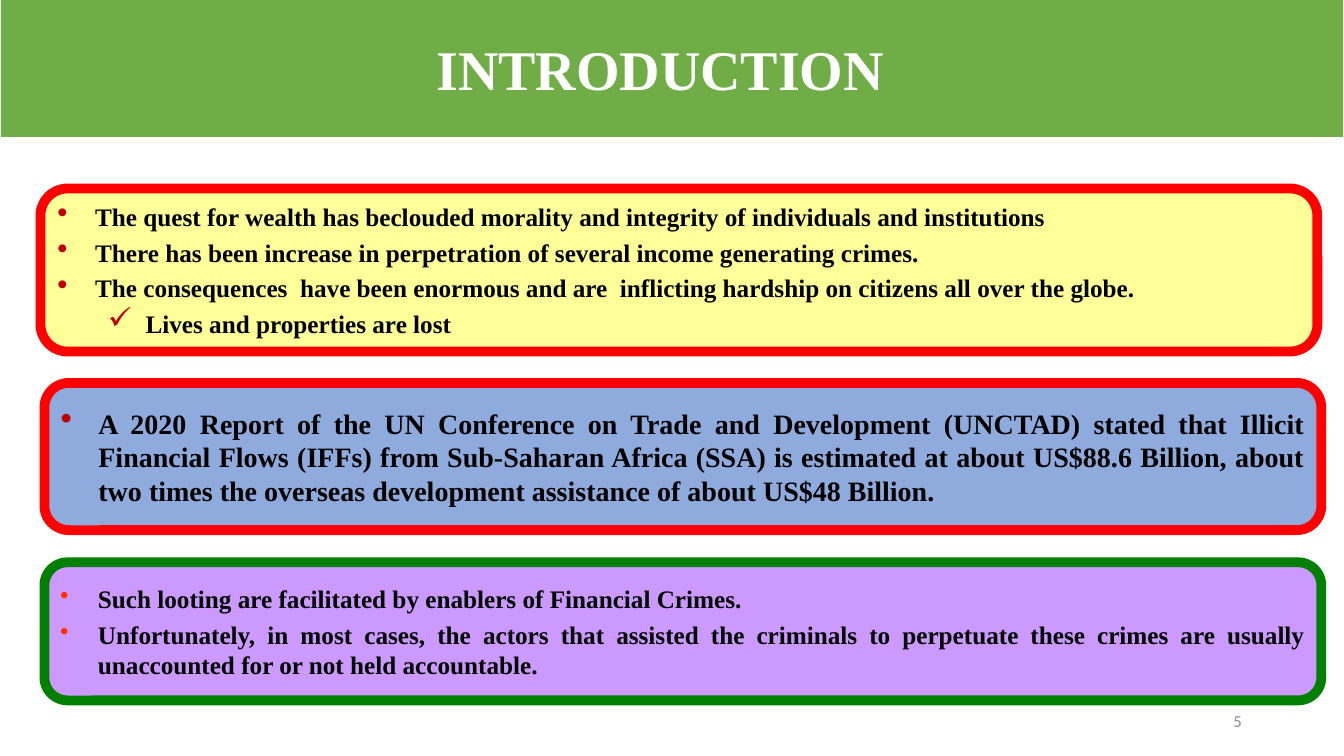
import dataclasses

import pptx
import pptx.dml.color
import pptx.enum.shapes
import pptx.enum.text
import pptx.util
from lxml import etree
from pptx.oxml.ns import qn

Cm = pptx.util.Cm
Pt = pptx.util.Pt
PP_ALIGN = pptx.enum.text.PP_ALIGN
MSO_SHAPE = pptx.enum.shapes.MSO_SHAPE


@dataclasses.dataclass(frozen=True)
class Theme:
    serif: str = "Times New Roman"
    sans: str = "Calibri"
    text: str = "000000"
    white: str = "FFFFFF"
    page_number: str = "8C8C8C"
    banner: str = "70AD47"
    yellow: str = "FFFF99"
    blue: str = "8FAADC"
    purple: str = "CC99FF"
    red: str = "FF0000"
    green: str = "008000"
    dark_red: str = "C00000"
    orange: str = "FF3300"
    title_size: int = 40
    large_size: int = 20
    body_size: int = 18
    number_size: int = 12
    panel_border: float = 7
    banner_border: float = 1.5


THEME = Theme()

PANELS = [
    dict(
        box=(1.02, 4.75, 32.18, 4.11), fill=THEME.yellow, border=THEME.red,
        bullet_color=THEME.dark_red, bullet_percent=120, size=THEME.body_size,
        items=[
            (0, "The quest for wealth has beclouded morality and integrity of individuals and institutions"),
            (0, "There has been increase in perpetration of several income generating crimes."),
            (0, "The consequences  have been enormous and are  inflicting hardship on citizens all over the globe. "),
            (1, "Lives and properties are lost"),
        ],
    ),
    dict(
        box=(1.12, 9.65, 32.18, 3.71), fill=THEME.blue, border=THEME.red,
        bullet_color=THEME.dark_red, bullet_percent=120, size=THEME.large_size,
        items=[
            (0, "A 2020 Report of the UN Conference on Trade and Development (UNCTAD) stated that "
                "Illicit Financial Flows (IFFs) from Sub-Saharan Africa (SSA) is estimated at about "
                "US$88.6 Billion, about two times the overseas development assistance of about "
                "US$48 Billion."),
        ],
    ),
    dict(
        box=(1.12, 14.17, 32.18, 3.48), fill=THEME.purple, border=THEME.green,
        bullet_color=THEME.orange, bullet_percent=100, size=THEME.body_size,
        items=[
            (0, "Such looting are facilitated by enablers of Financial Crimes."),
            (0, "Unfortunately, in most cases, the actors that assisted the criminals to perpetuate "
                "these crimes are usually unaccounted for or not held accountable."),
        ],
    ),
]


def rgb(color):
    return pptx.dml.color.RGBColor.from_string(color)


def add_box(slide, kind, box, fill, border, border_width):
    shape = slide.shapes.add_shape(kind, *map(Cm, box))
    shape.shadow.inherit = False
    shape.fill.solid()
    shape.fill.fore_color.rgb = rgb(fill)
    shape.line.color.rgb = rgb(border)
    shape.line.width = Pt(border_width)
    return shape


def add_run(paragraph, text, font_name, size, color, bold=False):
    run = paragraph.add_run()
    run.text = text
    run.font.name = font_name
    run.font.size = Pt(size)
    run.font.bold = bold
    run.font.color.rgb = rgb(color)


def add_label(slide, box, text, alignment, **font):
    frame = slide.shapes.add_textbox(*map(Cm, box)).text_frame
    frame.word_wrap = True
    frame.vertical_anchor = pptx.enum.text.MSO_ANCHOR.MIDDLE
    paragraph = frame.paragraphs[0]
    paragraph.alignment = alignment
    add_run(paragraph, text, **font)


def set_bullet(paragraph, level, color, percent):
    """Give the paragraph a hanging bullet: a dot, or a check mark one level down."""
    paragraph.level = level
    properties = paragraph._p.get_or_add_pPr()
    properties.set("marL", str(Cm(0.95 + 1.27 * level)))
    properties.set("indent", str(-Cm(0.95)))
    bullet_color = etree.SubElement(properties, qn("a:buClr"))
    etree.SubElement(bullet_color, qn("a:srgbClr"), val=color)
    etree.SubElement(properties, qn("a:buSzPct"), val=str(percent * 1000))
    etree.SubElement(properties, qn("a:buChar"), char="•✓"[level])


def add_banner(slide, box):
    left, top, width, height = box
    add_box(slide, MSO_SHAPE.RECTANGLE, box, THEME.banner, THEME.white, THEME.banner_border)
    add_label(slide, (left + 1.12, top + 0.96, width - 2.83, 1.96), "INTRODUCTION",
              PP_ALIGN.CENTER, font_name=THEME.serif, size=THEME.title_size,
              color=THEME.white, bold=True)


def add_panel(slide, box, fill, border, bullet_color, bullet_percent, size, items):
    shape = add_box(slide, MSO_SHAPE.ROUNDED_RECTANGLE, box, fill, border, THEME.panel_border)
    frame = shape.text_frame
    frame.word_wrap = True
    frame.vertical_anchor = pptx.enum.text.MSO_ANCHOR.MIDDLE
    frame.margin_left = frame.margin_right = Cm(0.23)
    frame.margin_top = frame.margin_bottom = Cm(0.11)
    for index, (level, text) in enumerate(items):
        paragraph = frame.add_paragraph() if index else frame.paragraphs[0]
        paragraph.alignment = PP_ALIGN.JUSTIFY
        paragraph.space_before = Pt(4)
        set_bullet(paragraph, level, bullet_color, bullet_percent)
        add_run(paragraph, text, THEME.serif, size, THEME.text, bold=True)


def add_page_number(slide, box):
    add_label(slide, box, "5", PP_ALIGN.RIGHT, font_name=THEME.sans,
              size=THEME.number_size, color=THEME.page_number)


def main():
    presentation = pptx.Presentation()
    presentation.slide_width = Cm(33.87)
    presentation.slide_height = Cm(19.05)
    slide = presentation.slides.add_slide(presentation.slide_layouts[6])
    add_page_number(slide, (23.93, 17.65, 7.62, 1.02))
    add_banner(slide, (0, -0.23, 33.87, 3.71))
    for panel in PANELS:
        add_panel(slide, **panel)
    presentation.save("out.pptx")


if __name__ == "__main__":
    main()
